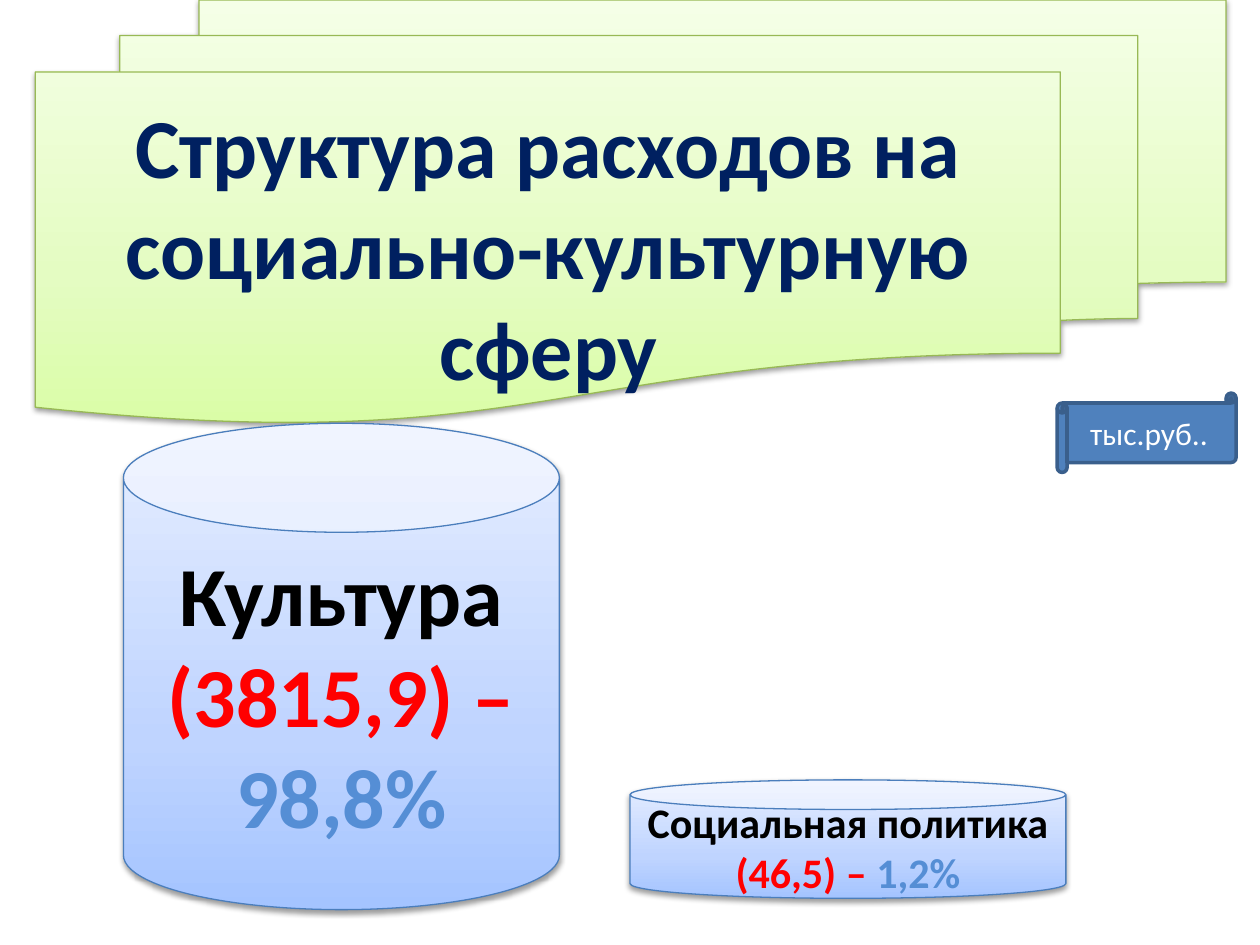
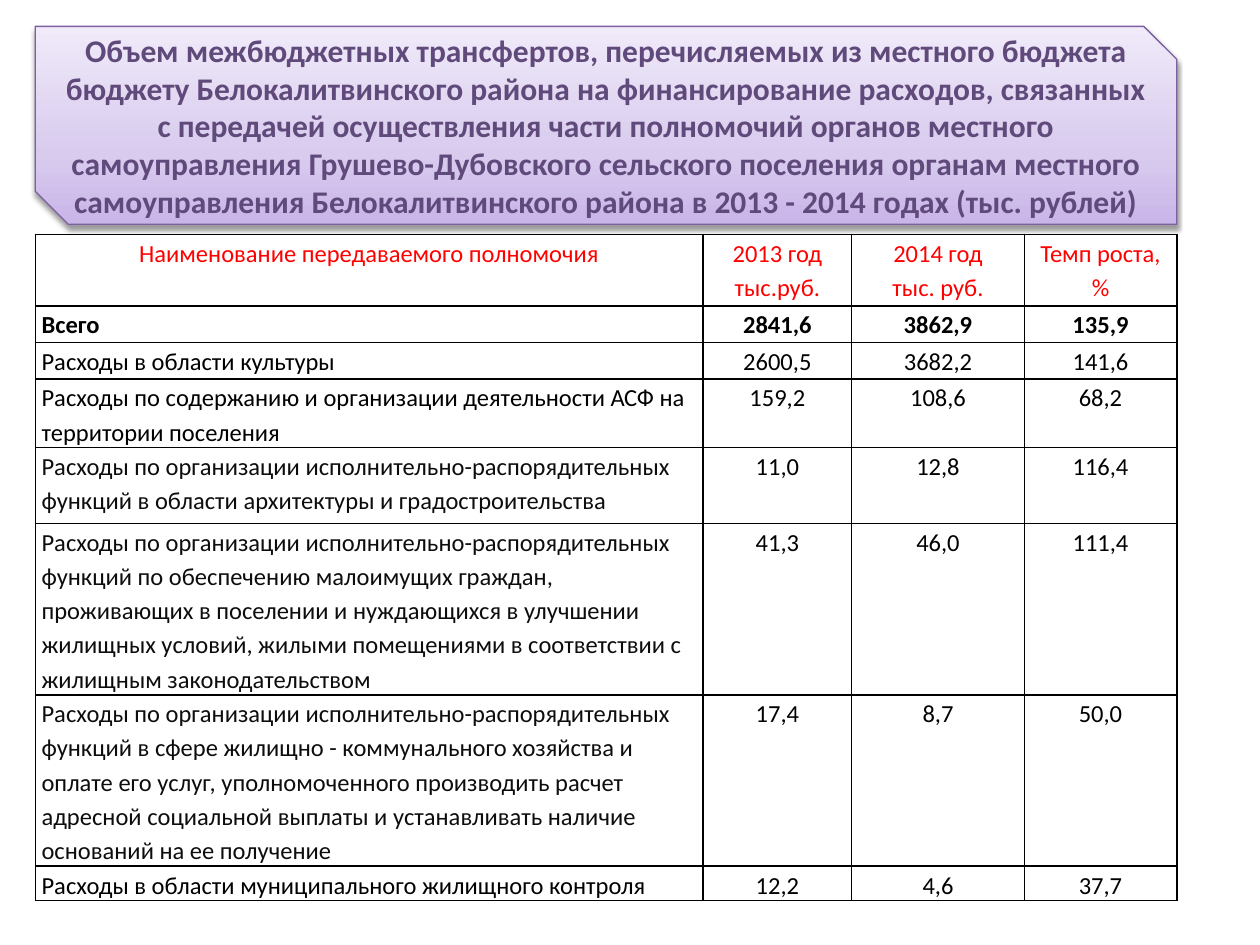
from pptx import Presentation
from pptx.dml.color import RGBColor
from pptx.enum.shapes import MSO_SHAPE
from pptx.enum.text import MSO_ANCHOR, MSO_AUTO_SIZE, PP_ALIGN
from pptx.oxml import parse_xml
from pptx.oxml.ns import nsdecls, qn
from pptx.util import Inches, Pt

STACKED_PAGES = MSO_SHAPE.FLOWCHART_MULTIDOCUMENT
CUT_CORNERS = MSO_SHAPE.SNIP_2_DIAG_RECTANGLE
CYLINDER = MSO_SHAPE.CAN
SCROLL = MSO_SHAPE.HORIZONTAL_SCROLL
LEFT, CENTER = PP_ALIGN.LEFT, PP_ALIGN.CENTER
TOP, MIDDLE = MSO_ANCHOR.TOP, MSO_ANCHOR.MIDDLE
NO_AUTOFIT = MSO_AUTO_SIZE.NONE

FONT = "Calibri"
BLACK, WHITE, RED, SOFT_BLACK = "000000", "FFFFFF", "FF0000", "0D0D0D"
NAVY, SHARE_BLUE, PLUM = "002060", "558ED5", "604A7B"
SCROLL_FILL, SCROLL_LINE = "4F81BD", "3A5F8C"
# Each theme: outline, then gradient colours from bottom to top
GREEN = ("98B955", ("DAFDA7", "E4FCC2", "F5FFE7"))
BLUE = ("4B7EBC", ("A4C4FF", "BFD4FF", "E6EEFF"))
VIOLET = ("7D60A0", ("C9B5E8", "D8CBEE", "F0EAF9"))
GRADIENT_STOPS = (0, 35, 100)
MARGIN = 0.28

TRANSFERS_TITLE = (
    "Объем межбюджетных трансфертов, перечисляемых из местного бюджета бюджету "
    "Белокалитвинского района на финансирование расходов, связанных с передачей "
    "осуществления части полномочий органов местного самоуправления "
    "Грушево-Дубовского сельского поселения органам местного самоуправления "
    "Белокалитвинского района в 2013 - 2014 годах (тыс. рублей)")
FUNCTIONS = "Расходы по организации исполнительно-распорядительных функций "
TRANSFERS = [
    ("Наименование передаваемого полномочия", "2013 год тыс.руб.",
     "2014 год\nтыс. руб.", "Темп роста, %"),
    ("Всего", "2841,6", "3862,9", "135,9"),
    ("Расходы в области культуры", "2600,5", "3682,2", "141,6"),
    ("Расходы по содержанию и организации деятельности АСФ на территории поселения",
     "159,2", "108,6", "68,2"),
    (FUNCTIONS + "в области архитектуры и градостроительства",
     "11,0", "12,8", "116,4"),
    (FUNCTIONS + "по обеспечению малоимущих граждан, проживающих в поселении и "
     "нуждающихся в улучшении жилищных условий, жилыми помещениями в соответствии "
     "с жилищным законодательством", "41,3", "46,0", "111,4"),
    (FUNCTIONS + "в сфере жилищно - коммунального хозяйства и оплате его услуг, "
     "уполномоченного производить расчет адресной социальной выплаты и "
     "устанавливать наличие оснований на ее получение", "17,4", "8,7", "50,0"),
    ("Расходы в области муниципального жилищного контроля", "12,2", "4,6", "37,7"),
]
COLUMN_WIDTHS = (5.3, 1.18, 1.37, 1.21)
ROW_HEIGHTS = (0.57, 0.29, 0.29, 0.47, 0.6, 1.19, 1.19, 0.09)


def rgb(color):
    return RGBColor.from_string(color)


def inches(box):
    return [Inches(value) for value in box]


def write(frame, runs, size, bold=False, align=CENTER):
    """Fill the first paragraph with (text, colour) runs."""
    frame.word_wrap = True
    paragraph = frame.paragraphs[0]
    paragraph.alignment = align
    for text, color in runs:
        for number, line in enumerate(text.split("\n")):
            if number:
                paragraph.add_line_break()
            run = paragraph.add_run()
            run.text = line
            run.font.name, run.font.size, run.font.bold = FONT, Pt(size), bold
            run.font.color.rgb = rgb(color)
    return paragraph


def add_outlined(slide, preset, box, line, width):
    shape = slide.shapes.add_shape(preset, *inches(box))
    shape.shadow.inherit = False
    shape.line.color.rgb = rgb(line)
    shape.line.width = Pt(width)
    shape.text_frame.vertical_anchor = MIDDLE
    return shape


def add_glossy(slide, preset, box, theme):
    """Preset shape with a vertical gradient and a soft shadow below."""
    line, colors = theme
    shape = add_outlined(slide, preset, box, line, 0.75)
    shape.fill.gradient()
    shape.fill.gradient_angle = 90
    properties = shape._element.spPr
    stops = properties.find(qn("a:gradFill")).find(qn("a:gsLst"))
    stops.clear()
    for position, color in zip(GRADIENT_STOPS, colors):
        stops.append(parse_xml(
            f'<a:gs {nsdecls("a")} pos="{position * 1000}">'
            f'<a:srgbClr val="{color}"/></a:gs>'))
    properties.find(qn("a:effectLst")).append(parse_xml(
        f'<a:outerShdw {nsdecls("a")} blurRad="{Pt(3.1)}" dist="{Pt(1.6)}" '
        'dir="5400000" rotWithShape="0"><a:srgbClr val="000000">'
        '<a:alpha val="38000"/></a:srgbClr></a:outerShdw>'))
    return shape


def add_banner_title(slide, preset, box, theme, text_box, text, size, color):
    """Decorated banner with the title at text_box, relative to the banner."""
    add_glossy(slide, preset, box, theme)
    left, top, width, height = text_box
    title = slide.shapes.title
    title.left, title.top, title.width, title.height = inches(
        (box[0] + left, box[1] + top, width, height))
    frame = title.text_frame
    frame.auto_size = NO_AUTOFIT
    frame.vertical_anchor = MIDDLE
    frame.margin_top = frame.margin_bottom = 0
    write(frame, [(text, color)], size, bold=True)
    slide.shapes._spTree.append(title._element)  # in front of the banner


def add_spending_cylinder(slide, box, name, amount, share, size):
    cylinder = add_glossy(slide, CYLINDER, box, BLUE)
    runs = [(f"{name} ", BLACK), (f"({amount}) – ", RED), (share, SHARE_BLUE)]
    write(cylinder.text_frame, runs, size, bold=True)


def add_unit_scroll(slide, box):
    scroll = add_outlined(slide, SCROLL, box, SCROLL_LINE, 2)
    scroll.fill.solid()
    scroll.fill.fore_color.rgb = rgb(SCROLL_FILL)
    write(scroll.text_frame, [("тыс.руб..", WHITE)], 18)


def add_borders(cell):
    properties = cell._tc.get_or_add_tcPr()
    for side in "LRTB":
        properties.append(parse_xml(
            f'<a:ln{side} {nsdecls("a")} w="{Pt(1)}"><a:solidFill>'
            f'<a:srgbClr val="{BLACK}"/></a:solidFill></a:ln{side}>'))


def transfer_color(row, column):
    if row == 0:
        return RED
    long_function = TRANSFERS[row][0].startswith(FUNCTIONS)
    return SOFT_BLACK if column == 0 and long_function else BLACK


def add_transfers_table(slide, left, top):
    box = (left, top, sum(COLUMN_WIDTHS), sum(ROW_HEIGHTS))
    table = slide.shapes.add_table(
        len(TRANSFERS), len(COLUMN_WIDTHS), *inches(box)).table
    table.first_row = table.horz_banding = False
    for column, width in zip(table.columns, COLUMN_WIDTHS):
        column.width = Inches(width)
    for row, height in zip(table.rows, ROW_HEIGHTS):
        row.height = Inches(height)
    for r, values in enumerate(TRANSFERS):
        for c, value in enumerate(values):
            cell = table.cell(r, c)
            add_borders(cell)
            cell.fill.background()
            cell.vertical_anchor = TOP
            cell.margin_left = cell.margin_right = Inches(0.05)
            cell.margin_top = cell.margin_bottom = 0
            paragraph = write(cell.text_frame, [(value, transfer_color(r, c))], 14,
                              bold=r == 1, align=LEFT if r and c == 0 else CENTER)
            paragraph.line_spacing = 1.15


def build_structure_slide(slide):
    add_banner_title(slide, STACKED_PAGES, (MARGIN, 0, 9.45, 3.36), GREEN,
                     (0, 0.73, 8.14, 2.44),
                     "Структура расходов на социально-культурную сферу", 48, NAVY)
    add_spending_cylinder(slide, (5, 6.19, 3.46, 0.94),
                          "Социальная политика", "46,5", "1,2%", 24)
    add_spending_cylinder(slide, (0.98, 3.36, 3.46, 3.86),
                          "Культура", "3815,9", "98,8%", 48)
    add_unit_scroll(slide, (8.39, 3.12, 1.42, 0.63))


def build_transfers_slide(slide):
    add_transfers_table(slide, MARGIN, 1.86)
    add_banner_title(slide, CUT_CORNERS, (MARGIN, 0.21, 9.06, 1.57), VIOLET,
                     (0.13, 0.02, 8.8, 1.53), TRANSFERS_TITLE, 18, PLUM)


def main():
    deck = Presentation()
    deck.slide_width, deck.slide_height = Inches(10), Inches(7.5)
    title_only = deck.slide_layouts[5]
    for build in (build_structure_slide, build_transfers_slide):
        build(deck.slides.add_slide(title_only))
    deck.save("out.pptx")


if __name__ == "__main__":
    main()
